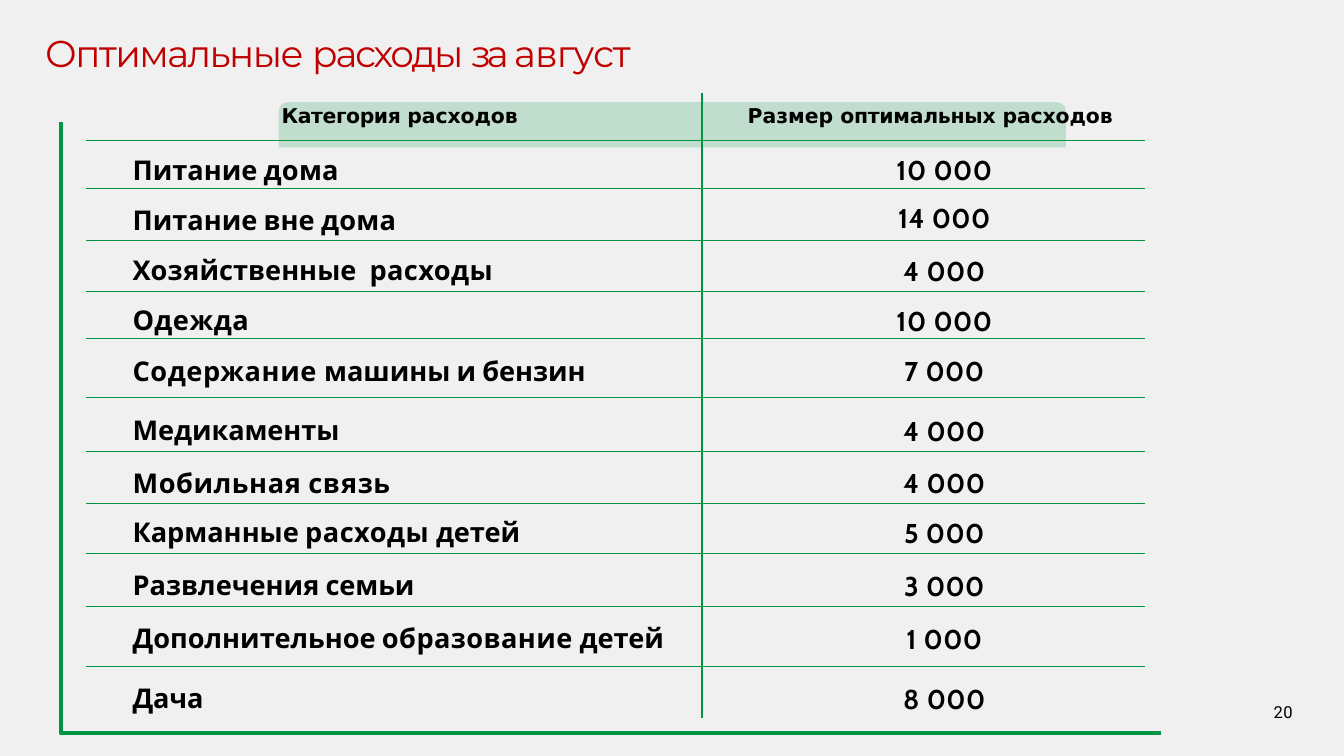
from typing import NamedTuple

from lxml import etree
from pptx import Presentation
from pptx import util as u
from pptx.dml import color as c
from pptx.enum import shapes as s, text as t
from pptx.oxml import ns
from pptx.table import _Cell as Cell
from pptx.text.text import TextFrame

COLORS = {"page": "F0F0F1", "title": "C00000", "green": "009444", "ink": "000000"}


class Span(NamedTuple):
    text: str
    spacing: float = 0


class Expense(NamedTuple):
    height: float
    category: list[Span]
    category_top: float
    thousands: int
    amount_top: float


class Edges(NamedTuple):
    """Border widths in points; zero means no line."""
    left: float = 0
    right: float = 0
    top: float = 0
    bottom: float = 0


TITLE = [Span("Оптимальные ", -1.8), Span("расходы ", -2.5), Span("за ", -5), Span("август", -1.1)]
HEADER_HEIGHT, HEADER_TOP = 0.78, 0.19
HEADERS = [
    [Span("Категория ", -0.5), Span("расходов", -0.1)],
    [Span("Размер "), Span("оптимальных ", -0.3), Span("расходов", -0.1)],
]
HEADER_INDENTS = [0.18, 0.21]
COLUMN_WIDTHS = [10.08, 7.25]
EXPENSES = [
    Expense(0.78, [Span("Питание "), Span("дома", 0.3)], 0.22, 10, 0.22),
    Expense(0.86, [Span("Питание вне "), Span("дома", 0.3)], 0.27, 14, 0.23),
    Expense(0.82, [Span("Хозяйственные"), Span(" ", 8), Span("расходы", 0.5)], 0.22, 4, 0.23),
    Expense(0.78, [Span("Одежда", 0.6)], 0.22, 10, 0.23),
    Expense(0.97, [Span("Содержание ", 0.7), Span("машины и "), Span("бензин", -0.1)], 0.27, 7, 0.28),
    Expense(0.87, [Span("Медикаменты", -0.1)], 0.27, 4, 0.29),
    Expense(0.86, [Span("Мобильная ", 0.7), Span("связь", 0.6)], 0.26, 4, 0.27),
    Expense(0.82, [Span("Карманные "), Span("расходы ", 0.6), Span("детей", -0.1)], 0.21, 5, 0.23),
    Expense(0.87, [Span("Развлечения "), Span("семьи", -0.1)], 0.26, 3, 0.28),
    Expense(0.98, [Span("Дополнительное "), Span("образование ", 0.5), Span("детей", -0.1)], 0.26, 1, 0.27),
    Expense(0.84, [Span("Дача", -0.2)], 0.26, 8, 0.27),
]
FRAME_POINTS = [
    (18.71, 11.84), (18.7, 11.88), (18.66, 11.92), (18.61, 11.94), (18.55, 11.95),
    (1.4, 11.95), (1.34, 11.94), (1.29, 11.92), (1.26, 11.88), (1.24, 11.84), (1.24, 1.85),
]


def rgb(name: str) -> c.RGBColor:
    return c.RGBColor.from_string(COLORS[name])


def write(frame: TextFrame, spans: list[Span], *, font: str, size: float, color: str = "ink",
          bold: bool = False, align: t.PP_ALIGN = t.PP_ALIGN.LEFT, indent: float = 0) -> None:
    para = frame.paragraphs[0]
    para.alignment = align
    properties = para._p.get_or_add_pPr()
    properties.set("marL", str(u.Inches(indent)))
    properties.set("indent", "0")
    for span in spans:
        run = para.add_run()
        run.text = span.text
        run.font.name, run.font.size, run.font.bold = font, u.Pt(size), bold
        run.font.color.rgb = rgb(color)
        run._r.get_or_add_rPr().set("spc", str(round(span.spacing * 100)))


def trim(frame: TextFrame, top: float) -> None:
    """Leave only a top margin and keep the text at the top."""
    frame.margin_left = frame.margin_right = frame.margin_bottom = 0
    frame.margin_top = u.Inches(top)
    frame.vertical_anchor = t.MSO_ANCHOR.TOP
    frame.auto_size = t.MSO_AUTO_SIZE.NONE
    frame.word_wrap = True


def style_cell(cell: Cell, top: float, edges: Edges) -> None:
    cell.margin_left = cell.margin_right = cell.margin_bottom = 0
    cell.margin_top = u.Inches(top)
    properties = cell._tc.get_or_add_tcPr()
    for tag, width in zip(("a:lnL", "a:lnR", "a:lnT", "a:lnB"), edges):
        line = etree.SubElement(properties, ns.qn(tag), w=str(u.Pt(width)))
        if width:
            fill = etree.SubElement(line, ns.qn("a:solidFill"))
            etree.SubElement(fill, ns.qn("a:srgbClr"), val=COLORS["green"])
        else:
            etree.SubElement(line, ns.qn("a:noFill"))
    cell.fill.background()


def add_title(page) -> None:
    title = page.shapes.title
    title.left, title.top, title.width, title.height = map(u.Inches, (0.74, 0.49, 11.58, 0.76))
    trim(title.text_frame, 0.01)
    write(title.text_frame, TITLE, font="Montserrat", size=44, color="title")


def add_page_number(page) -> None:
    box = page.shapes.add_textbox(*map(u.Inches, (20.84, 11.46, 0.35, 0.36)))
    trim(box.text_frame, 0.02)
    write(box.text_frame, [Span("20", 0.4)], font="Roboto", size=19.5)


def add_header_band(page) -> None:
    band = page.shapes.add_shape(s.MSO_SHAPE.ROUND_2_SAME_RECTANGLE,
                                 *map(u.Inches, (4.56, 1.67, 12.88, 0.74)))
    band.adjustments[0] = 0.2
    band.shadow.inherit = False
    band.line.fill.background()
    band.fill.solid()
    band.fill.fore_color.rgb = rgb("green")
    tint = band._element.spPr.find(".//" + ns.qn("a:srgbClr"))
    etree.SubElement(tint, ns.qn("a:alpha"), val="20000")


def add_expense_table(page) -> None:
    heights = [HEADER_HEIGHT] + [expense.height for expense in EXPENSES]
    table = page.shapes.add_table(len(heights), len(COLUMN_WIDTHS), u.Inches(1.41), u.Inches(1.52),
                                  u.Inches(sum(COLUMN_WIDTHS)), u.Inches(sum(heights))).table
    table.first_row = table.horz_banding = False
    for column, width in zip(table.columns, COLUMN_WIDTHS):
        column.width = u.Inches(width)
    for row, height in zip(table.rows, heights):
        row.height = u.Inches(height)

    dividers = [Edges(right=3), Edges(left=3)]
    for column, (spans, indent) in enumerate(zip(HEADERS, HEADER_INDENTS)):
        cell = table.cell(0, column)
        style_cell(cell, HEADER_TOP, dividers[column]._replace(bottom=2.25))
        write(cell.text_frame, spans, font="DejaVu Sans", size=24, bold=True,
              align=t.PP_ALIGN.CENTER, indent=indent)

    for row, expense in enumerate(EXPENSES, start=1):
        top_line = 2.25 if row == 1 else 1
        bottom_line = 0 if row == len(EXPENSES) else 1
        amount = [Span(f"{expense.thousands} ", 0.7), Span("000", 0.5)]
        contents = [
            (expense.category, expense.category_top, t.PP_ALIGN.LEFT, 0.76),
            (amount, expense.amount_top, t.PP_ALIGN.CENTER, 0.67),
        ]
        for column, (spans, top, align, indent) in enumerate(contents):
            cell = table.cell(row, column)
            style_cell(cell, top, dividers[column]._replace(top=top_line, bottom=bottom_line))
            write(cell.text_frame, spans, font="Cabin", size=32, bold=True, align=align, indent=indent)


def add_frame(page) -> None:
    start, *rest = FRAME_POINTS
    builder = page.shapes.build_freeform(*start, scale=u.Inches(1))
    builder.add_line_segments(rest, close=False)
    frame = builder.convert_to_shape()
    frame.shadow.inherit = False
    frame.fill.background()
    frame.line.color.rgb = rgb("green")
    frame.line.width = u.Pt(4.95)


def main() -> None:
    deck = Presentation()
    deck.slide_width, deck.slide_height = u.Inches(21.99), u.Inches(12.37)
    page = deck.slides.add_slide(deck.slide_layouts[5])
    page.background.fill.solid()
    page.background.fill.fore_color.rgb = rgb("page")
    add_title(page)
    add_page_number(page)
    add_header_band(page)
    add_expense_table(page)
    add_frame(page)
    deck.save("out.pptx")


if __name__ == "__main__":
    main()
